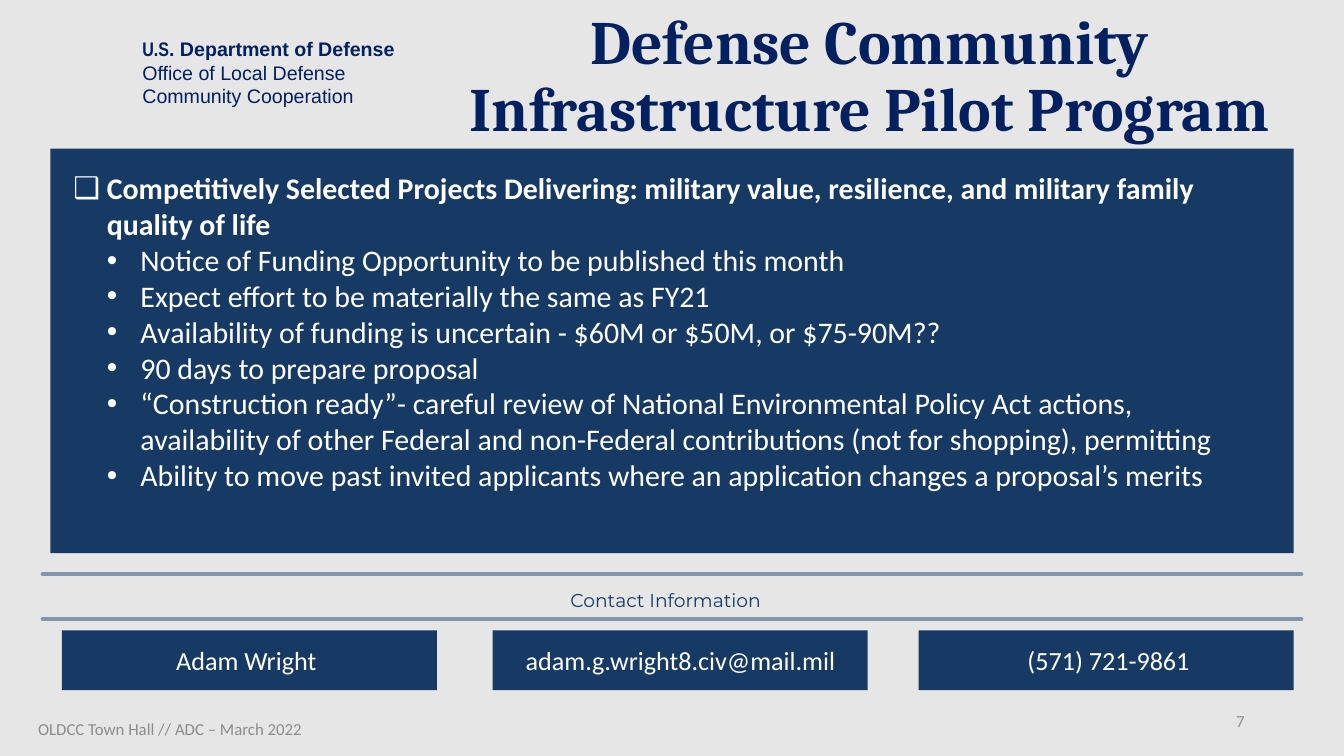
import dataclasses

import pptx
import pptx.dml.color
import pptx.enum.shapes
import pptx.enum.text
import pptx.oxml.ns
import pptx.util
from lxml import etree
from pptx.util import Inches

ALIGN = pptx.enum.text.PP_ALIGN
ANCHOR = pptx.enum.text.MSO_ANCHOR
qn = pptx.oxml.ns.qn


@dataclasses.dataclass(frozen=True)
class Theme:
    background: str = "E7E6E6"
    navy: str = "002060"
    panel: str = "173A64"
    rule: str = "8395AA"
    muted: str = "8C8C8C"
    white: str = "FFFFFF"
    title: int = 66
    body: int = 32
    contact: int = 28
    office: int = 21
    heading: int = 20
    footer: int = 18
    rule_width: float = 3.75


def rgb(code):
    return pptx.dml.color.RGBColor.from_string(code)


def set_values(target, values):
    for name, value in values.items():
        setattr(target, name, value)


class ProgramSlide:
    def __init__(self, presentation, theme):
        self.theme = theme
        self.slide = presentation.slides.add_slide(presentation.slide_layouts[1])
        fill = self.slide.background.fill
        fill.solid()
        fill.fore_color.rgb = rgb(theme.background)

    def place(self, shape, box):
        edges = ("left", "top", "width", "height")
        set_values(shape, dict(zip(edges, map(Inches, box))))

    def frame(self, shape, anchor=ANCHOR.TOP, inset=None, wrap=True):
        frame = shape.text_frame
        set_values(frame, {"word_wrap": wrap, "vertical_anchor": anchor,
                           "auto_size": pptx.enum.text.MSO_AUTO_SIZE.NONE})
        if inset is not None:
            sides = ("left", "top", "right", "bottom")
            set_values(frame, {f"margin_{side}": Inches(inset) for side in sides})
        return frame

    def run(self, paragraph, words, size, color, font="Calibri", bold=False):
        run = paragraph.add_run()
        run.text = words
        set_values(run.font, {"name": font, "size": pptx.util.Pt(size), "bold": bold})
        run.font.color.rgb = rgb(color)

    def bullet(self, paragraph, mark, indent):
        """Give the paragraph a bullet that hangs half an inch before its text."""
        properties = paragraph._p.get_or_add_pPr()
        properties.set("marL", str(Inches(indent)))
        properties.set("indent", str(Inches(-0.5)))
        etree.SubElement(properties, qn("a:buFont")).set("typeface", "Arial")
        etree.SubElement(properties, qn("a:buChar")).set("char", mark)

    def title(self, words, box):
        title = self.slide.shapes.title
        self.place(title, box)
        paragraph = self.frame(title, ANCHOR.MIDDLE).paragraphs[0]
        set_values(paragraph, {"alignment": ALIGN.CENTER, "line_spacing": 0.9})
        self.run(paragraph, words, self.theme.title, self.theme.navy, "Cambria", True)

    def body(self, lead, points, box):
        body = self.slide.placeholders[1]
        self.place(body, box)
        frame = self.frame(body, inset=0)
        for index, words in enumerate([lead, *points]):
            is_lead = index == 0
            paragraph = frame.paragraphs[0] if is_lead else frame.add_paragraph()
            self.bullet(paragraph, "❑" if is_lead else "•", 0.5 if is_lead else 1)
            set_values(paragraph, {"level": 0 if is_lead else 1, "alignment": ALIGN.LEFT,
                                   "space_before": pptx.util.Pt(0)})
            self.run(paragraph, words, self.theme.body, self.theme.white, bold=is_lead)

    def text(self, lines, box, size, color, align=ALIGN.LEFT, font="Calibri", spacing=None,
             **layout):
        """Add a text box; each line is a list of (words, font overrides) runs."""
        frame = self.frame(self.slide.shapes.add_textbox(*map(Inches, box)), **layout)
        for index, runs in enumerate(lines):
            paragraph = frame.add_paragraph() if index else frame.paragraphs[0]
            set_values(paragraph, {"alignment": align, "line_spacing": spacing})
            for words, style in runs:
                self.run(paragraph, words, size, color, **{"font": font, **style})

    def panel(self, box):
        panel = self.slide.shapes.add_shape(
            pptx.enum.shapes.MSO_SHAPE.RECTANGLE, *map(Inches, box))
        panel.shadow.inherit = False
        panel.fill.solid()
        panel.fill.fore_color.rgb = rgb(self.theme.panel)
        panel.line.fill.background()

    def rule(self, left, right, y):
        rule = self.slide.shapes.add_connector(
            pptx.enum.shapes.MSO_CONNECTOR.STRAIGHT, *map(Inches, (left, y, right, y)))
        rule.line.color.rgb = rgb(self.theme.rule)
        rule.line.width = pptx.util.Pt(self.theme.rule_width)
        properties = rule._element.spPr
        properties.find(qn("a:ln")).set("cap", "rnd")
        etree.SubElement(properties, qn("a:effectLst"))

    def send_to_back(self, placeholder_count=2):
        """Move the leading placeholders in front of the shapes drawn after them."""
        tree = self.slide.shapes._spTree
        for shape in list(self.slide.shapes)[:placeholder_count]:
            tree.append(shape._element)


def main():
    theme = Theme()
    presentation = pptx.Presentation()
    set_values(presentation, {"slide_width": Inches(20), "slide_height": Inches(11.25)})
    page = ProgramSlide(presentation, theme)

    page.text([[("U.S", {"font": "Arial Narrow", "bold": True}),
                (". Department of Defense", {"bold": True})],
               [("Office of Local Defense", {})],
               [("Community Cooperation", {})]],
              (2.02, 0.5, 3.99, 1.16), theme.office, theme.navy, font="Arial", wrap=False)
    page.title("Defense Community Infrastructure Pilot Program", (5.99, 0.08, 13.9, 2.17))

    page.panel((0.75, 2.21, 18.5, 6.02))
    page.body(
        "Competitively Selected Projects Delivering: military value, resilience, "
        "and military family quality of life",
        ["Notice of Funding Opportunity to be published this month",
         "Expect effort to be materially the same as FY21",
         "Availability of funding is uncertain - $60M or $50M, or $75-90M??",
         "90 days to prepare proposal",
         "“Construction ready”- careful review of National Environmental Policy Act actions, "
         "availability of other Federal and non-Federal contributions (not for shopping), "
         "permitting",
         "Ability to move past invited applicants where an application changes "
         "a proposal’s merits"],
        (1.09, 2.53, 17.26, 4.85))

    for y in (8.54, 9.21):
        page.rule(0.63, 19.37, y)
    page.text([[("Contact Information", {})]], (6.89, 8.71, 6.03, 0.37), theme.heading,
              theme.panel, ALIGN.CENTER, "Montserrat", pptx.util.Pt(28), inset=0)

    contacts = (("Adam Wright", 0.92, 1), ("adam.g.wright8.civ@mail.mil", 7.33, 7.46),
                ("(571) 721-9861", 13.67, 13.83))
    for detail, panel_left, text_left in contacts:
        page.panel((panel_left, 9.38, 5.58, 0.89))
        page.text([[(detail, {})]], (text_left, 9.54, 5.33, 0.57), theme.contact,
                  theme.white, ALIGN.CENTER)

    page.text([[("OLDCC Town Hall // ADC – March 2022", {})]], (0.25, 10.54, 4.56, 0.6),
              theme.footer, theme.muted, ALIGN.CENTER, anchor=ANCHOR.MIDDLE)
    page.text([[("7", {})]], (14.12, 10.43, 4.5, 0.6), theme.footer, theme.muted,
              ALIGN.RIGHT, anchor=ANCHOR.MIDDLE)

    page.send_to_back()
    presentation.save("out.pptx")


if __name__ == "__main__":
    main()
